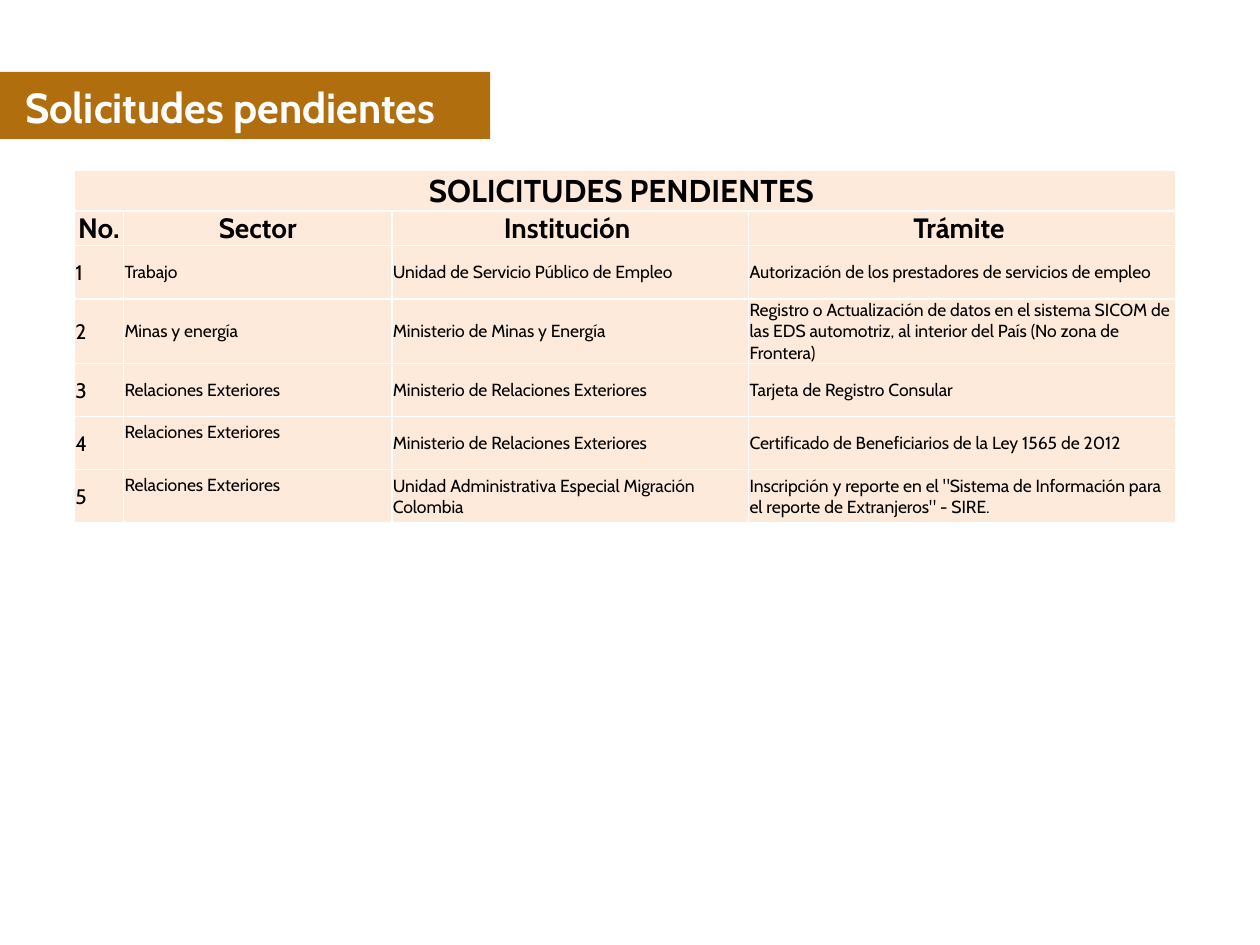
import pptx
import pptx.dml.color
import pptx.enum.shapes
import pptx.enum.text
import pptx.oxml
import pptx.oxml.ns
import pptx.util

Cm = pptx.util.Cm
Pt = pptx.util.Pt
ALIGN = pptx.enum.text.PP_ALIGN
MIDDLE = pptx.enum.text.MSO_ANCHOR.MIDDLE

OCHRE, PEACH, WHITE, BLACK = "B06E0E", "FDEADA", "FFFFFF", "000000"

HEADING = "SOLICITUDES PENDIENTES "
COLUMNS = ["No. ", "Sector", "Institución ", "Trámite "]
REQUESTS = [
    ["1", "Trabajo", "Unidad de Servicio Público de Empleo",
     "Autorización de los prestadores de servicios de empleo"],
    ["2", "Minas y energía", "Ministerio de Minas y Energía",
     "Registro o Actualización de datos en el sistema SICOM de las EDS "
     "automotriz, al interior del País (No zona de Frontera)"],
    ["3", "Relaciones Exteriores", "Ministerio de Relaciones Exteriores",
     "Tarjeta de Registro Consular"],
    ["4", "Relaciones Exteriores", "Ministerio de Relaciones Exteriores",
     "Certificado de Beneficiarios de la Ley 1565 de 2012"],
    ["5", "Relaciones Exteriores",
     "Unidad Administrativa Especial Migración Colombia",
     'Inscripción y reporte en el "Sistema de Información para el reporte '
     'de Extranjeros" - SIRE.'],
]
COLUMN_WIDTHS = [0.99, 5.41, 7.19, 8.61]
ROW_HEIGHTS = [0.81, 0.66] + [1.07] * len(REQUESTS)
RAISED_SECTORS = {"4", "5"}


def rgb(hex_color):
    return pptx.dml.color.RGBColor.from_string(hex_color)


def apply(target, values):
    for name, value in values.items():
        setattr(target, name, value)


class SlideBuilder:
    def __init__(self, slide, font):
        self.slide = slide
        self.font = font

    def add_text(self, frame, text, size, color, bold=False, align=ALIGN.LEFT):
        paragraph = frame.paragraphs[0]
        paragraph.alignment = align
        run = paragraph.add_run()
        run.text = text
        apply(run.font, {"name": self.font, "size": Pt(size), "bold": bold})
        run.font.color.rgb = rgb(color)

    def band(self, left, top, width, height, color):
        band = self.slide.shapes.add_shape(
            pptx.enum.shapes.MSO_SHAPE.RECTANGLE,
            Cm(left), Cm(top), Cm(width), Cm(height))
        band.shadow.inherit = False
        band.fill.solid()
        band.fill.fore_color.rgb = rgb(color)
        band.line.fill.background()
        return band

    def title(self, text, left, top, width, height, band):
        """Place the title in front of its band."""
        title = self.slide.shapes.title
        apply(title, {"left": Cm(left), "top": Cm(top),
                      "width": Cm(width), "height": Cm(height)})
        apply(title.text_frame, {"word_wrap": True, "vertical_anchor": MIDDLE})
        self.add_text(title.text_frame, text, 24, WHITE, bold=True)
        band.element.addnext(title.element)

    def table(self, left, top, widths, heights):
        table = self.slide.shapes.add_table(
            len(heights), len(widths), Cm(left), Cm(top),
            Cm(sum(widths)), Cm(sum(heights))).table
        for column, width in zip(table.columns, widths):
            column.width = Cm(width)
        for row, height in zip(table.rows, heights):
            row.height = Cm(height)
        for cell in table.iter_cells():
            apply(cell, {"margin_left": Cm(0.02), "margin_top": Cm(0.02),
                         "margin_right": Cm(0.02), "margin_bottom": 0,
                         "vertical_anchor": MIDDLE})
            self.borders(cell, WHITE, 1)
            cell.fill.solid()
            cell.fill.fore_color.rgb = rgb(PEACH)
        return table

    def borders(self, cell, color, points):
        properties = cell._tc.get_or_add_tcPr()
        for side in ("lnL", "lnR", "lnT", "lnB"):
            properties.append(pptx.oxml.parse_xml(
                f'<a:{side} {pptx.oxml.ns.nsdecls("a")} w="{Pt(points)}">'
                f'<a:solidFill><a:srgbClr val="{color}"/></a:solidFill>'
                f'</a:{side}>'))


def main():
    deck = pptx.Presentation()
    apply(deck, {"slide_width": Cm(25.4), "slide_height": Cm(19.05)})
    builder = SlideBuilder(deck.slides.add_slide(deck.slide_layouts[5]), "Cabin")

    band = builder.band(-0.2, 1.45, 10.08, 1.35, OCHRE)
    builder.title("Solicitudes pendientes", 0.25, 1.52, 11, 1.27, band)

    table = builder.table(1.5, 3.44, COLUMN_WIDTHS, ROW_HEIGHTS)
    heading = table.cell(0, 0)
    heading.merge(table.cell(0, len(COLUMNS) - 1))
    builder.add_text(heading.text_frame, HEADING, 18, BLACK, True, ALIGN.CENTER)
    for column, label in enumerate(COLUMNS):
        builder.add_text(table.cell(1, column).text_frame, label, 16, BLACK,
                         True, ALIGN.CENTER)
    for row, request in enumerate(REQUESTS, start=2):
        for column, text in enumerate(request):
            size = 12 if column == 0 else 10
            builder.add_text(table.cell(row, column).text_frame, text, size,
                             BLACK)
        if request[0] in RAISED_SECTORS:
            table.cell(row, 1).margin_bottom = Cm(0.44)

    deck.save("out.pptx")


if __name__ == "__main__":
    main()
